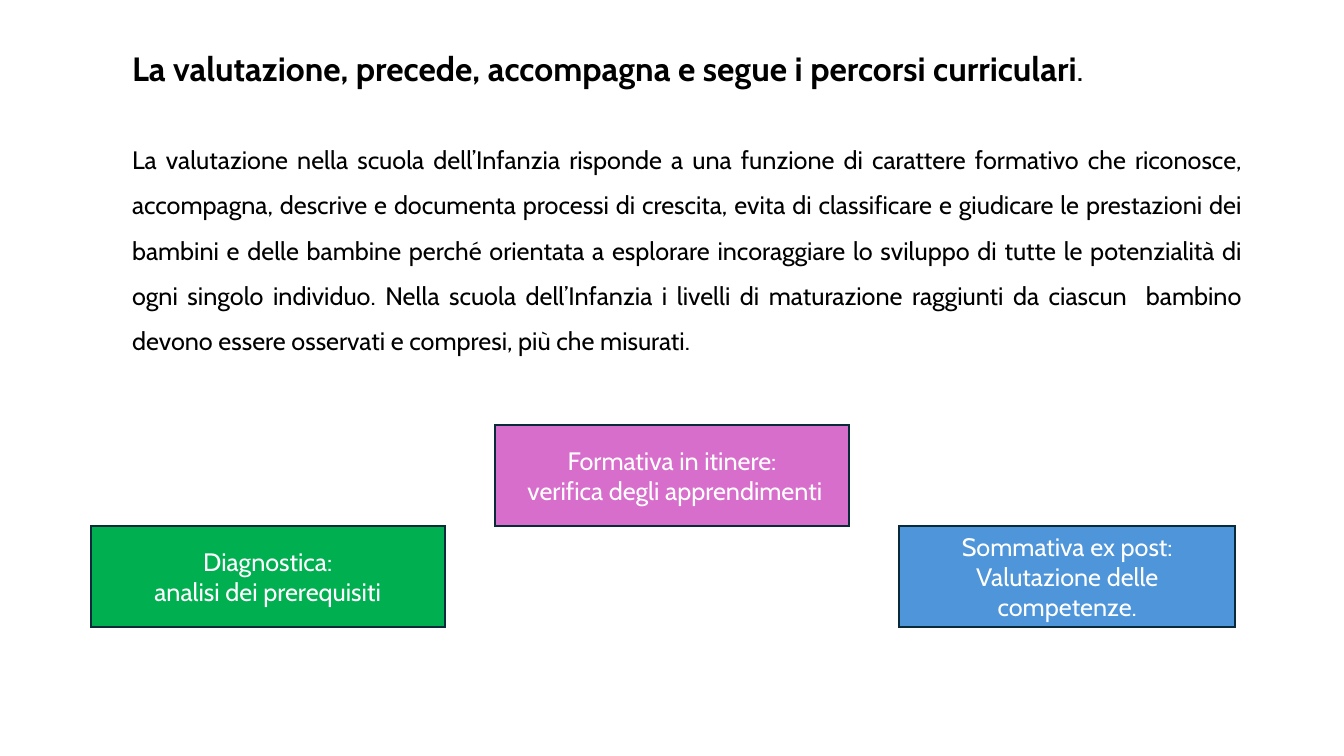
from dataclasses import dataclass

from pptx import Presentation
from pptx.dml.color import RGBColor
from pptx.enum import shapes, text
from pptx.oxml.ns import qn
from pptx.util import Emu, Pt

PX = 9144  # EMU per px, 100 px to the inch
FONT = "Cabin"
TITLE = "La valutazione, precede, accompagna e segue i percorsi curriculari"
BODY = (
    "La valutazione nella scuola dell’Infanzia risponde a una funzione di carattere "
    "formativo che riconosce, accompagna, descrive e documenta processi di crescita, "
    "evita di classificare e giudicare le prestazioni dei bambini e delle bambine "
    "perché orientata a esplorare incoraggiare lo sviluppo di tutte le potenzialità "
    "di ogni singolo individuo. Nella scuola dell’Infanzia i livelli di maturazione "
    "raggiunti da ciascun  bambino devono essere osservati e compresi, più che misurati."
)


@dataclass(frozen=True)
class Phase:
    left: int
    top: int
    width: int
    fill: str
    label: str


PHASES = [
    Phase(90, 522, 351, "00B050", "Diagnostica:\nanalisi dei prerequisiti"),
    Phase(892, 522, 333, "4E95D9", "Sommativa ex post:\nValutazione delle competenze."),
    Phase(491, 422, 351, "D86ECC", "Formativa in itinere:\n verifica degli apprendimenti"),
]
PHASE_HEIGHT = 100


def px(n: int) -> Emu:
    return Emu(n * PX)


def rgb(value: str) -> RGBColor:
    return RGBColor.from_string(value)


def format_text(tf, size: int, color: str, align, anchor) -> None:
    tf.word_wrap = True
    tf.auto_size = text.MSO_AUTO_SIZE.NONE
    tf.vertical_anchor = anchor
    for p in tf.paragraphs:
        p.alignment = align
        for r in p.runs:
            r.font.name = FONT
            r.font.size = Pt(size)
            r.font.color.rgb = rgb(color)


def place(sp, left: int, top: int, width: int, height: int) -> None:
    sp.left, sp.top, sp.width, sp.height = map(px, (left, top, width, height))


def add_title(sp) -> None:
    place(sp, 121, 43, 1121, 50)
    tf = sp.text_frame
    tf.text = TITLE
    p = tf.paragraphs[0]
    p.add_run().text = "."
    format_text(tf, 24, "000000", text.PP_ALIGN.LEFT, text.MSO_ANCHOR.TOP)
    for r, bold in zip(p.runs, (True, False)):
        r.font.bold = bold


def add_body(sp) -> None:
    place(sp, 121, 123, 1121, 234)
    tf = sp.text_frame
    tf.text = BODY
    format_text(tf, 18, "000000", text.PP_ALIGN.JUSTIFY, text.MSO_ANCHOR.TOP)
    p = tf.paragraphs[0]
    p.line_spacing = 1.5
    p.space_before = Pt(0)
    props = p._p.get_or_add_pPr()
    props.set("marL", "0")
    props.set("indent", "0")
    props.append(props.makeelement(qn("a:buNone"), {}))


def add_phase(slide, phase: Phase) -> None:
    sp = slide.shapes.add_shape(
        shapes.MSO_SHAPE.RECTANGLE,
        *map(px, (phase.left, phase.top, phase.width, PHASE_HEIGHT)),
    )
    sp.shadow.inherit = False
    sp.fill.solid()
    sp.fill.fore_color.rgb = rgb(phase.fill)
    sp.line.color.rgb = rgb("092A39")
    sp.line.width = Pt(1.5)
    ln = sp.line._get_or_add_ln()
    ln.append(ln.makeelement(qn("a:miter"), {"lim": "800000"}))
    sp.text_frame.text = phase.label
    format_text(sp.text_frame, 18, "FFFFFF", text.PP_ALIGN.CENTER, text.MSO_ANCHOR.MIDDLE)


def main() -> None:
    prs = Presentation()
    prs.slide_width, prs.slide_height = px(1333), px(750)
    slide = prs.slides.add_slide(prs.slide_layouts[1])
    add_title(slide.shapes.title)
    add_body(slide.placeholders[1])
    for phase in PHASES:
        add_phase(slide, phase)
    prs.save("out.pptx")


if __name__ == "__main__":
    main()
